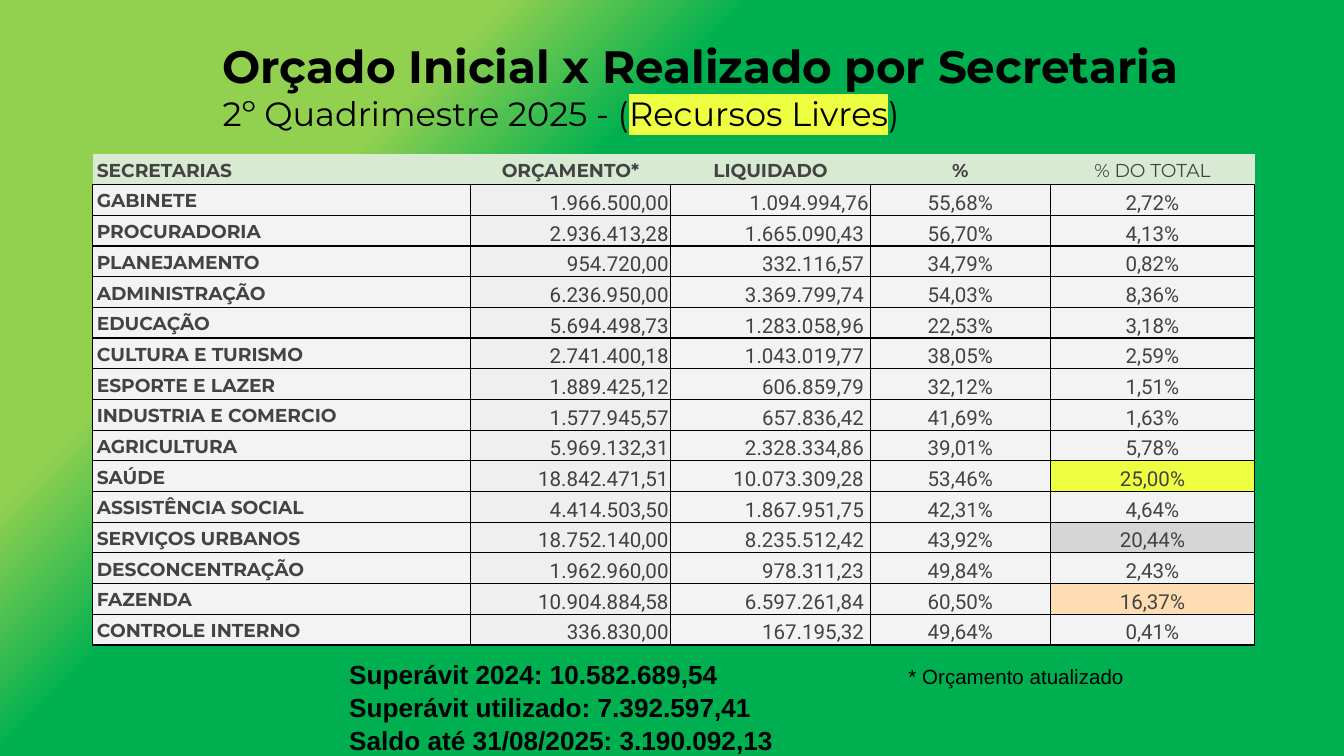
from dataclasses import dataclass

from lxml import etree
from pptx import Presentation
from pptx.dml.color import RGBColor
from pptx.enum.text import MSO_ANCHOR, MSO_AUTO_SIZE, PP_ALIGN
from pptx.oxml.ns import qn
from pptx.util import Cm, Pt

LEFT, CENTER, RIGHT = PP_ALIGN.LEFT, PP_ALIGN.CENTER, PP_ALIGN.RIGHT
TOP, BOTTOM = MSO_ANCHOR.TOP, MSO_ANCHOR.BOTTOM
GROW = MSO_AUTO_SIZE.SHAPE_TO_FIT_TEXT
NO_STYLE = "{2D5ABB26-0587-4C30-8999-92F81FD0307C}"


@dataclass(frozen=True)
class Theme:
    light_green: str = "92D050"
    green: str = "00B050"
    black: str = "000000"
    header: str = "D9EAD3"
    row: str = "F3F3F3"
    budget: str = "EFEFEF"
    yellow: str = "EEFF41"
    gray: str = "D6D6D6"
    orange: str = "FFDDB3"
    label: str = "434343"
    budget_text: str = "404040"
    heading_font: str = "Montserrat"
    number_font: str = "Roboto"
    note_font: str = "Arial"
    title_size: float = 24.3
    subtitle_size: float = 18
    label_size: float = 10
    number_size: float = 11
    summary_size: float = 14
    border: float = 0.75


class SlideBuilder:
    def __init__(self, slide, theme):
        self.slide = slide
        self.theme = theme

    def background(self, stops, angle):
        fill = self.slide.background.fill
        fill.gradient()
        fill.gradient_angle = angle
        stop_list = self.slide.element.find(".//" + qn("a:gsLst"))
        for stop in list(stop_list):
            stop_list.remove(stop)
        for percent, color in stops:
            stop = etree.SubElement(stop_list, qn("a:gs"), pos=str(percent * 1000))
            etree.SubElement(stop, qn("a:srgbClr"), val=color)

    def run(self, paragraph, text, font, size, color, bold=False, highlight=None):
        run = paragraph.add_run()
        run.text = text
        run.font.size = Pt(size)
        run.font.bold = bold
        run.font.color.rgb = RGBColor.from_string(color)
        run.font.name = font
        if highlight:
            mark = etree.Element(qn("a:highlight"))
            etree.SubElement(mark, qn("a:srgbClr"), val=highlight)
            run.font.fill  # the highlight follows the fill in the run properties
            run._r.rPr.find(qn("a:solidFill")).addnext(mark)

    def text_box(self, left, top, width, height, anchor=TOP):
        box = self.slide.shapes.add_textbox(Cm(left), Cm(top), Cm(width), Cm(height))
        frame = box.text_frame
        frame.word_wrap = True
        frame.vertical_anchor = anchor
        return frame

    def note(self, left, top, width, height, lines, size, bold=False, spacing=1.0):
        frame = self.text_box(left, top, width, height)
        frame.auto_size = GROW
        for index, line in enumerate(lines):
            paragraph = frame.add_paragraph() if index else frame.paragraphs[0]
            paragraph.line_spacing = spacing
            self.run(paragraph, line, self.theme.note_font, size, self.theme.black, bold)

    def table(self, left, top, column_widths, row_height, row_count):
        frame = self.slide.shapes.add_table(
            row_count, len(column_widths), Cm(left), Cm(top),
            Cm(sum(column_widths)), Cm(row_height * row_count))
        table = frame.table
        table.first_row = table.horz_banding = False
        table._tbl.tblPr.find(qn("a:tableStyleId")).text = NO_STYLE
        for column, width in zip(table.columns, column_widths):
            column.width = Cm(width)
        for row in table.rows:
            row.height = Cm(row_height)
        return table

    def cell(self, cell, text, fill, align, font, size, color, bold, margins, sides):
        cell.margin_left, cell.margin_top, cell.margin_right, cell.margin_bottom = map(Cm, margins)
        cell.vertical_anchor = BOTTOM
        paragraph = cell.text_frame.paragraphs[0]
        paragraph.alignment = align
        self.run(paragraph, text, font, size, color, bold)
        properties = cell._tc.get_or_add_tcPr()
        for side in sides:
            line = etree.SubElement(properties, qn("a:ln" + side), w=str(Pt(self.theme.border)))
            solid = etree.SubElement(line, qn("a:solidFill"))
            etree.SubElement(solid, qn("a:srgbClr"), val=self.theme.black)
        cell.fill.solid()
        cell.fill.fore_color.rgb = RGBColor.from_string(fill)


HEADERS = ["SECRETARIAS", "ORÇAMENTO*", "LIQUIDADO", "%", "% DO TOTAL"]
DEPARTMENTS = [
    ("GABINETE", "1.966.500,00", "1.094.994,76", "55,68%", "2,72%"),
    ("PROCURADORIA", "2.936.413,28", "1.665.090,43", "56,70%", "4,13%"),
    ("PLANEJAMENTO", "954.720,00", "332.116,57", "34,79%", "0,82%"),
    ("ADMINISTRAÇÃO", "6.236.950,00", "3.369.799,74", "54,03%", "8,36%"),
    ("EDUCAÇÃO", "5.694.498,73", "1.283.058,96", "22,53%", "3,18%"),
    ("CULTURA E TURISMO", "2.741.400,18", "1.043.019,77", "38,05%", "2,59%"),
    ("ESPORTE E LAZER", "1.889.425,12", "606.859,79", "32,12%", "1,51%"),
    ("INDUSTRIA E COMERCIO", "1.577.945,57", "657.836,42", "41,69%", "1,63%"),
    ("AGRICULTURA", "5.969.132,31", "2.328.334,86", "39,01%", "5,78%"),
    ("SAÚDE", "18.842.471,51", "10.073.309,28", "53,46%", "25,00%"),
    ("ASSISTÊNCIA SOCIAL", "4.414.503,50", "1.867.951,75", "42,31%", "4,64%"),
    ("SERVIÇOS URBANOS", "18.752.140,00", "8.235.512,42", "43,92%", "20,44%"),
    ("DESCONCENTRAÇÃO", "1.962.960,00", "978.311,23", "49,84%", "2,43%"),
    ("FAZENDA", "10.904.884,58", "6.597.261,84", "60,50%", "16,37%"),
    ("CONTROLE INTERNO", "336.830,00", "167.195,32", "49,64%", "0,41%"),
]


def main():
    theme = Theme()
    deck = Presentation()
    deck.slide_width, deck.slide_height = Cm(25.4), Cm(14.29)
    builder = SlideBuilder(deck.slides.add_slide(deck.slide_layouts[6]), theme)

    # Diagonal green background
    builder.background([(0, theme.light_green), (24, theme.light_green),
                        (36, theme.green), (100, theme.green)], 315)

    # Title and subtitle
    title = builder.text_box(3.96, 0.58, 20.6, 2.06, BOTTOM).paragraphs[0]
    builder.run(title, "Orçado Inicial x Realizado por Secretaria",
                theme.heading_font, theme.title_size, theme.black, bold=True)
    title.add_line_break()
    for text, highlight in [("2º Quadrimestre 2025 - (", None),
                            ("Recursos Livres", theme.yellow), (")", None)]:
        builder.run(title, text, theme.heading_font, theme.subtitle_size,
                    theme.black, highlight=highlight)

    # Budget table: header row
    table = builder.table(1.75, 2.91, [7.14, 3.78, 3.78, 3.4, 3.86], 0.58, len(DEPARTMENTS) + 1)
    label_margins = (0.08, 0.05, 0.08, 0.05)
    for column, text in enumerate(HEADERS):
        builder.cell(table.cell(0, column), text, theme.header, CENTER if column else LEFT,
                     theme.heading_font, theme.label_size, theme.label,
                     column < len(HEADERS) - 1, label_margins, "B")

    # Budget table: one row per department
    share_fills = {"SAÚDE": theme.yellow, "SERVIÇOS URBANOS": theme.gray, "FAZENDA": theme.orange}
    for row, (department, *numbers) in enumerate(DEPARTMENTS, start=1):
        builder.cell(table.cell(row, 0), department, theme.row, LEFT, theme.heading_font,
                     theme.label_size, theme.label, True, label_margins, "LRTB")
        paid_margin = 0.03 if row == 1 else 0.12
        styles = [
            (theme.budget, RIGHT, theme.budget_text, 0.03),
            (theme.row, RIGHT, theme.label, paid_margin),
            (theme.row, CENTER, theme.label, 0.03),
            (share_fills.get(department, theme.row), CENTER, theme.label, 0.03),
        ]
        for column, (number, style) in enumerate(zip(numbers, styles), start=1):
            fill, align, color, right_margin = style
            builder.cell(table.cell(row, column), number, fill, align, theme.number_font,
                         theme.number_size, color, False, (0.03, 0.03, right_margin, 0), "LRTB")

    # Footnote and surplus summary
    builder.note(16.92, 12.42, 6.81, 0.74, ["* Orçamento atualizado"], theme.number_size)
    builder.note(6.35, 12.29, 12.7, 2.06,
                 ["Superávit 2024: 10.582.689,54", "Superávit utilizado: 7.392.597,41",
                  "Saldo até 31/08/2025: 3.190.092,13"],
                 theme.summary_size, bold=True, spacing=1.05)

    deck.save("out.pptx")


if __name__ == "__main__":
    main()
